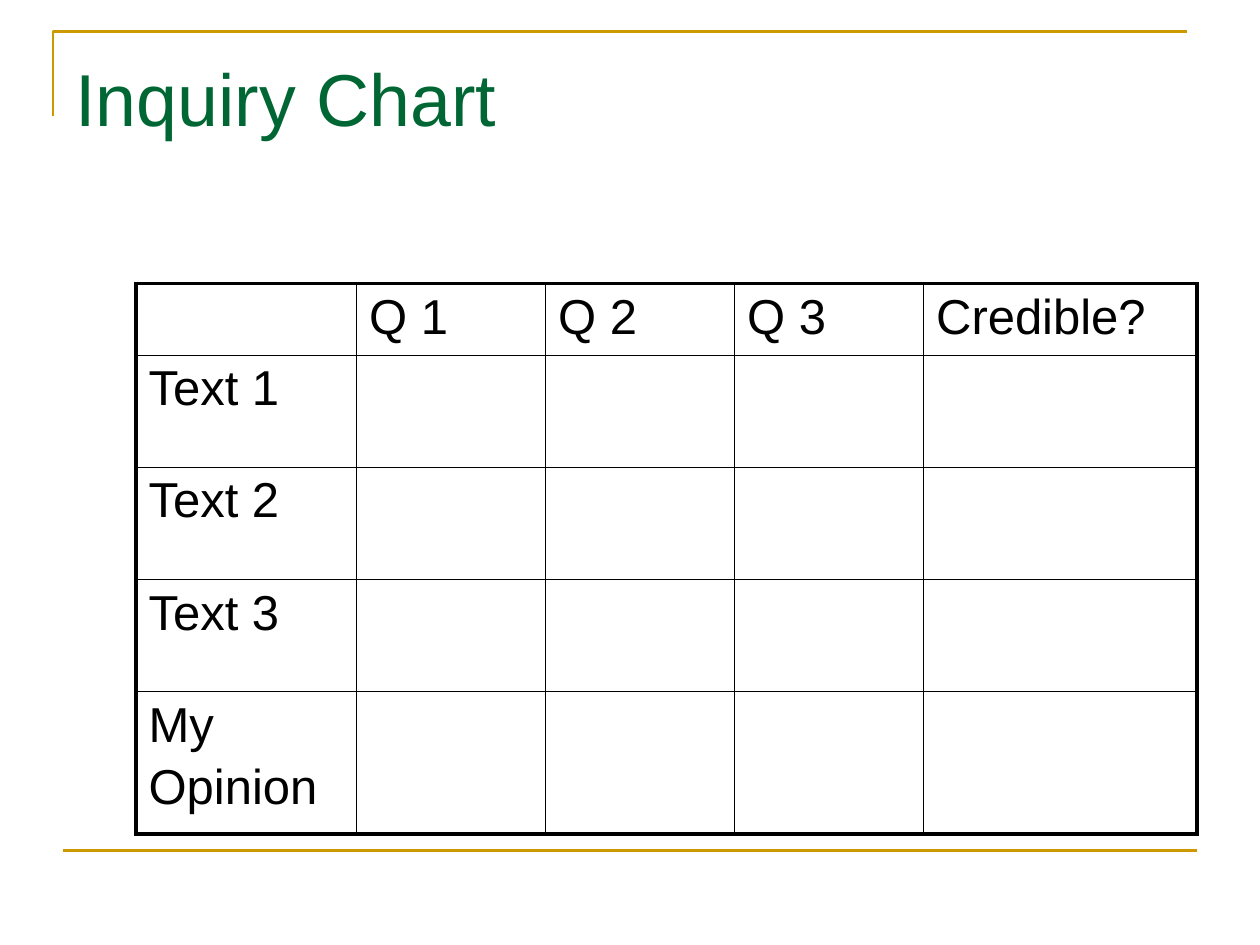
from typing import NamedTuple

from lxml import etree
from pptx import Presentation
from pptx.dml.color import RGBColor
from pptx.enum.shapes import MSO_CONNECTOR
from pptx.enum.text import MSO_ANCHOR
from pptx.oxml.ns import qn
from pptx.util import Inches, Pt

STRAIGHT = MSO_CONNECTOR.STRAIGHT
TOP = MSO_ANCHOR.TOP

SLIDE_WIDTH, SLIDE_HEIGHT = 10, 7.5
FONT = "Arial"
GOLD, GREEN, BLACK = "CC9900", "006633", "000000"
THIN, THICK, RULE = 1, 2.25, 1.5

COLUMN_WIDTHS = [1.75, 1.5, 1.5, 1.5, 2.17]
ROW_HEIGHTS = [0.57, 0.89, 0.89, 0.89, 1.13]
QUESTIONS = ["Q 1", "Q 2", "Q 3", "Credible?"]
SOURCES = ["Text 1", "Text 2", "Text 3", "My\nOpinion"]


class Box(NamedTuple):
    left: float
    top: float
    width: float
    height: float

    def lengths(self) -> list:
        return [Inches(value) for value in self]


class TextStyle(NamedTuple):
    size: float
    color: str
    space_between: float = 0


TITLE_STYLE = TextStyle(42, GREEN)
CELL_STYLE = TextStyle(28, BLACK, space_between=4.4)


def rgb(color: str) -> RGBColor:
    return RGBColor.from_string(color)


def style_line(line) -> None:
    line.color.rgb = rgb(GOLD)
    line.width = Pt(RULE)


def write_text(text_frame, text: str, style: TextStyle) -> None:
    for index, words in enumerate(text.split("\n")):
        paragraph = text_frame.add_paragraph() if index else text_frame.paragraphs[0]
        if index:
            paragraph.space_before = Pt(style.space_between)
        run = paragraph.add_run()
        run.text = words
        run.font.name = FONT
        run.font.size = Pt(style.size)
        run.font.color.rgb = rgb(style.color)


def add_frame(slide) -> None:
    """Corner rule above the title and straight rule below the table."""
    left, top, right, bottom = 0.42, 0.25, 9.42, 0.92
    builder = slide.shapes.build_freeform(Inches(left), Inches(bottom))
    builder.add_line_segments(
        [(Inches(left), Inches(top)), (Inches(right), Inches(top))], close=False)
    corner = builder.convert_to_shape()
    corner.shadow.inherit = False
    corner.fill.background()
    style_line(corner.line)

    margin, rule_top = SLIDE_WIDTH * 0.05, SLIDE_HEIGHT * 0.9
    rule = slide.shapes.add_connector(
        STRAIGHT, Inches(margin), Inches(rule_top),
        Inches(SLIDE_WIDTH - margin), Inches(rule_top))
    style_line(rule.line)
    etree.SubElement(rule._element.spPr, qn("a:effectLst"))


def add_title(slide, box: Box, text: str) -> None:
    text_frame = slide.shapes.add_textbox(*box.lengths()).text_frame
    text_frame.word_wrap = True
    text_frame.vertical_anchor = TOP
    text_frame.margin_top = Inches(0.12)
    write_text(text_frame, text, TITLE_STYLE)


def set_borders(cell, widths: dict[str, float]) -> None:
    properties = cell._tc.get_or_add_tcPr()
    for index, (side, width) in enumerate(widths.items()):
        line = etree.Element(qn(f"a:ln{side}"), w=str(Pt(width)))
        fill = etree.SubElement(line, qn("a:solidFill"))
        etree.SubElement(fill, qn("a:srgbClr"), val=BLACK)
        properties.insert(index, line)


def add_inquiry_table(slide, left: float, top: float) -> None:
    rows = [["", *QUESTIONS]] + [[name] + [""] * len(QUESTIONS) for name in SOURCES]
    last_row, last_column = len(ROW_HEIGHTS) - 1, len(COLUMN_WIDTHS) - 1
    box = Box(left, top, sum(COLUMN_WIDTHS), sum(ROW_HEIGHTS))
    table = slide.shapes.add_table(
        len(ROW_HEIGHTS), len(COLUMN_WIDTHS), *box.lengths()).table
    table.first_row = table.horz_banding = False
    for column, width in zip(table.columns, COLUMN_WIDTHS):
        column.width = Inches(width)
    for row, height in zip(table.rows, ROW_HEIGHTS):
        row.height = Inches(height)

    for row_index, texts in enumerate(rows):
        for column_index, text in enumerate(texts):
            cell = table.cell(row_index, column_index)
            cell.fill.background()
            if text:
                write_text(cell.text_frame, text, CELL_STYLE)
            # Thick lines only on the outside of the table
            outside = {"L": column_index == 0, "R": column_index == last_column,
                       "T": row_index == 0, "B": row_index == last_row}
            set_borders(cell, {side: THICK if outer else THIN
                               for side, outer in outside.items()})


def main() -> None:
    presentation = Presentation()
    presentation.slide_width = Inches(SLIDE_WIDTH)
    presentation.slide_height = Inches(SLIDE_HEIGHT)
    slide = presentation.slides.add_slide(presentation.slide_layouts[6])
    add_frame(slide)
    add_title(slide, Box(0.5, 0.3, 9, 1.25), "Inquiry Chart")
    add_inquiry_table(slide, left=1.08, top=2.25)
    presentation.save("out.pptx")


if __name__ == "__main__":
    main()
